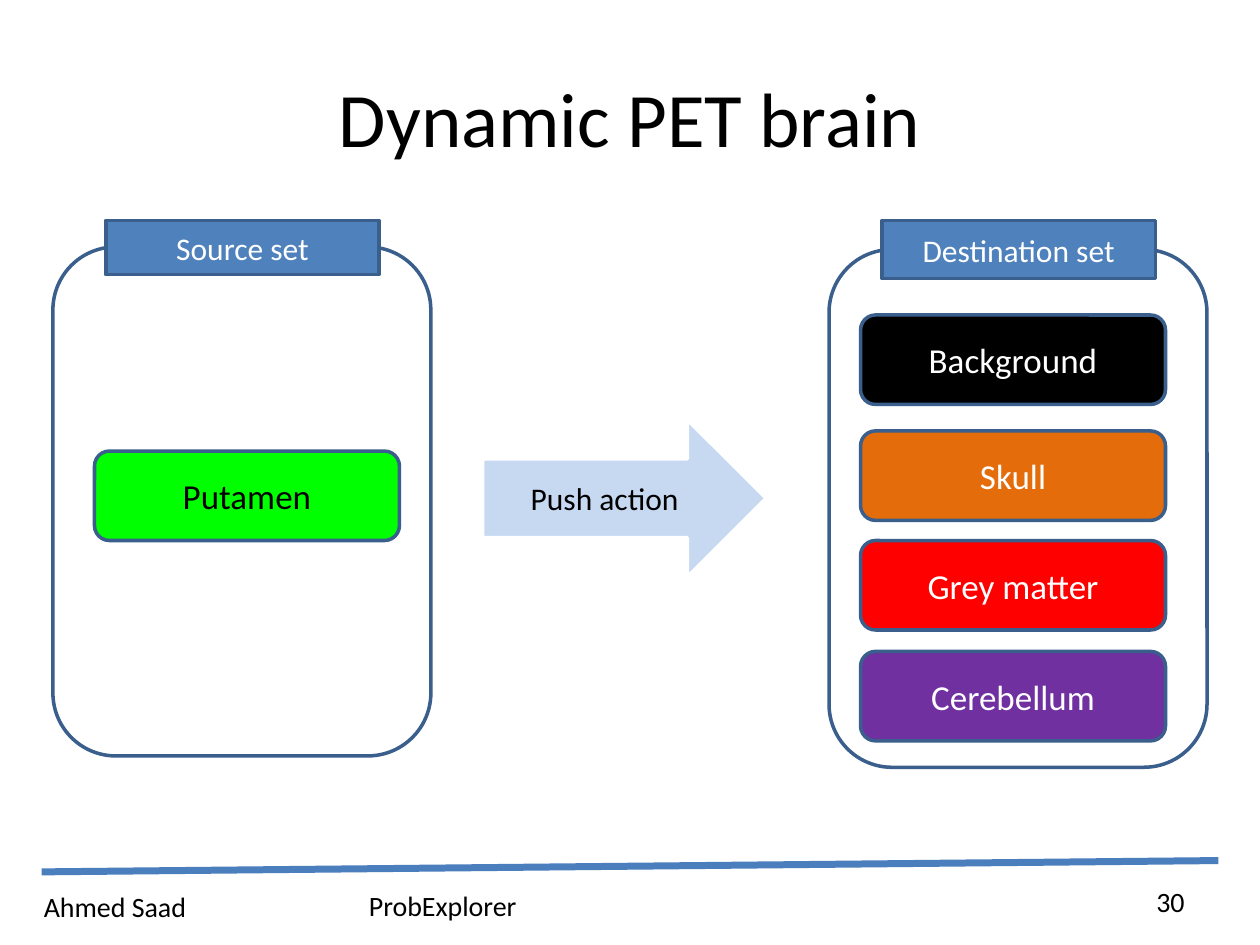
from lxml import etree
from pptx import Presentation
from pptx.dml.color import RGBColor
from pptx.enum.shapes import MSO_CONNECTOR, MSO_SHAPE
from pptx.enum.text import MSO_ANCHOR, PP_ALIGN
from pptx.oxml.ns import qn
from pptx.util import Inches, Pt

RECT = MSO_SHAPE.RECTANGLE
ROUNDED = MSO_SHAPE.ROUNDED_RECTANGLE
ARROW = MSO_SHAPE.RIGHT_ARROW
STRAIGHT = MSO_CONNECTOR.STRAIGHT
LEFT, CENTER, RIGHT = PP_ALIGN.LEFT, PP_ALIGN.CENTER, PP_ALIGN.RIGHT
TOP, MIDDLE = MSO_ANCHOR.TOP, MSO_ANCHOR.MIDDLE

FONT = "Calibri"
BLACK, WHITE = "000000", "FFFFFF"
OUTLINE, HEADER_BLUE, RULE_BLUE, PALE_BLUE = "3A5F8C", "4F81BD", "4B7EBC", "C6D9F1"
TISSUES = [
    ("Background", 2.5, BLACK),
    ("Skull", 3.42, "E46C0A"),
    ("Grey matter", 4.29, "FF0000"),
    ("Cerebellum", 5.17, "7030A0"),
]


def color(hex_value):
    return RGBColor.from_string(hex_value)


def write(frame, text, size, text_color, align=CENTER, anchor=MIDDLE):
    frame.word_wrap = True
    frame.vertical_anchor = anchor
    paragraph = frame.paragraphs[0]
    paragraph.text = text
    paragraph.alignment = align
    paragraph.font.name = FONT
    paragraph.font.size = Pt(size)
    paragraph.font.color.rgb = color(text_color)


def place(element, left, top, width, height):
    element.left, element.top = Inches(left), Inches(top)
    element.width, element.height = Inches(width), Inches(height)


def add_block(slide, kind, box, fill=None, outline=OUTLINE):
    block = slide.shapes.add_shape(kind, *map(Inches, box))
    block.shadow.inherit = False
    if fill:
        block.fill.solid()
        block.fill.fore_color.rgb = color(fill)
    else:
        block.fill.background()
    block.line.color.rgb = color(outline)
    block.line.width = Pt(2)
    return block


def add_tissue(slide, name, left, top, fill, text_color=WHITE):
    tissue = add_block(slide, ROUNDED, (left, top, 2.42, 0.71), fill)
    write(tissue.text_frame, name, 20, text_color)


def add_set(slide, name, left, top, height, header_height):
    add_block(slide, ROUNDED, (left, top, 3, height))
    header = add_block(slide, RECT, (left + 0.42, 1.75, 2.17, header_height), HEADER_BLUE)
    write(header.text_frame, name, 18, WHITE)


def add_label(slide, text, box, align=LEFT, anchor=TOP):
    label = slide.shapes.add_textbox(*map(Inches, box))
    write(label.text_frame, text, 16, BLACK, align, anchor)


def add_footer_rule(slide):
    rule = slide.shapes.add_connector(
        STRAIGHT, Inches(0.33), Inches(6.92), Inches(9.67), Inches(6.83))
    rule.line.color.rgb = color(RULE_BLUE)
    rule.line.width = Pt(4)
    etree.SubElement(rule._element.spPr, qn("a:effectLst"))


def main():
    deck = Presentation()
    deck.slide_width, deck.slide_height = Inches(10), Inches(7.5)
    slide = deck.slides.add_slide(deck.slide_layouts[5])

    add_label(slide, "Ahmed Saad", (0.25, 7.01, 1.5, 0.37))
    add_label(slide, "ProbExplorer", (2.83, 7, 1.67, 0.37))
    add_footer_rule(slide)

    title = slide.shapes.title
    place(title, 0.5, 0.3, 9, 1.25)
    write(title.text_frame, "Dynamic PET brain", 44, BLACK)

    push = add_block(slide, ARROW, (3.83, 3.33, 2.25, 1.25), PALE_BLUE, WHITE)
    write(push.text_frame, "Push action", 18, BLACK)

    add_tissue(slide, "Putamen", 0.75, 3.58, "00FF00", BLACK)
    for name, top, fill in TISSUES:
        add_tissue(slide, name, 6.83, top, fill)

    add_set(slide, "Source set", 0.42, 1.96, 4.04, 0.43)
    add_set(slide, "Destination set", 6.58, 1.98, 4.11, 0.46)
    add_label(slide, "30", (7.17, 6.95, 2.33, 0.4), RIGHT, MIDDLE)

    deck.save("out.pptx")


if __name__ == "__main__":
    main()
